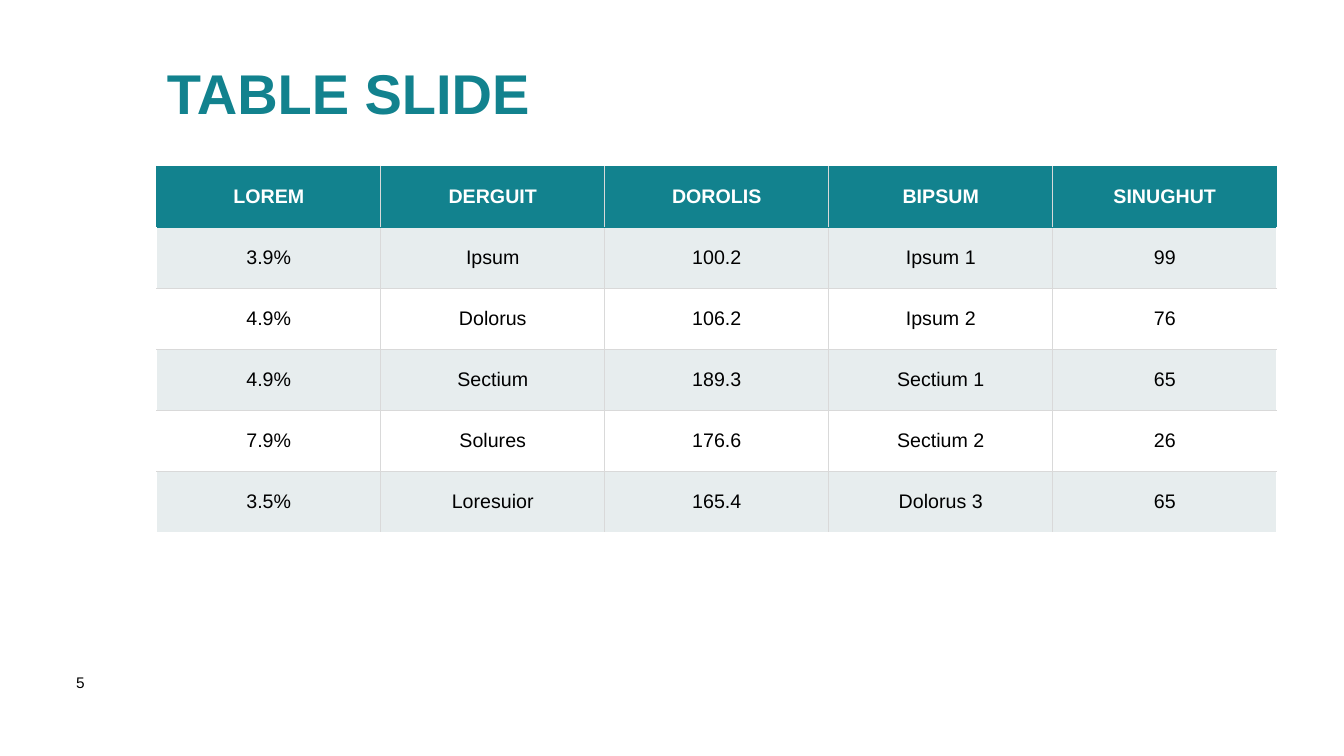
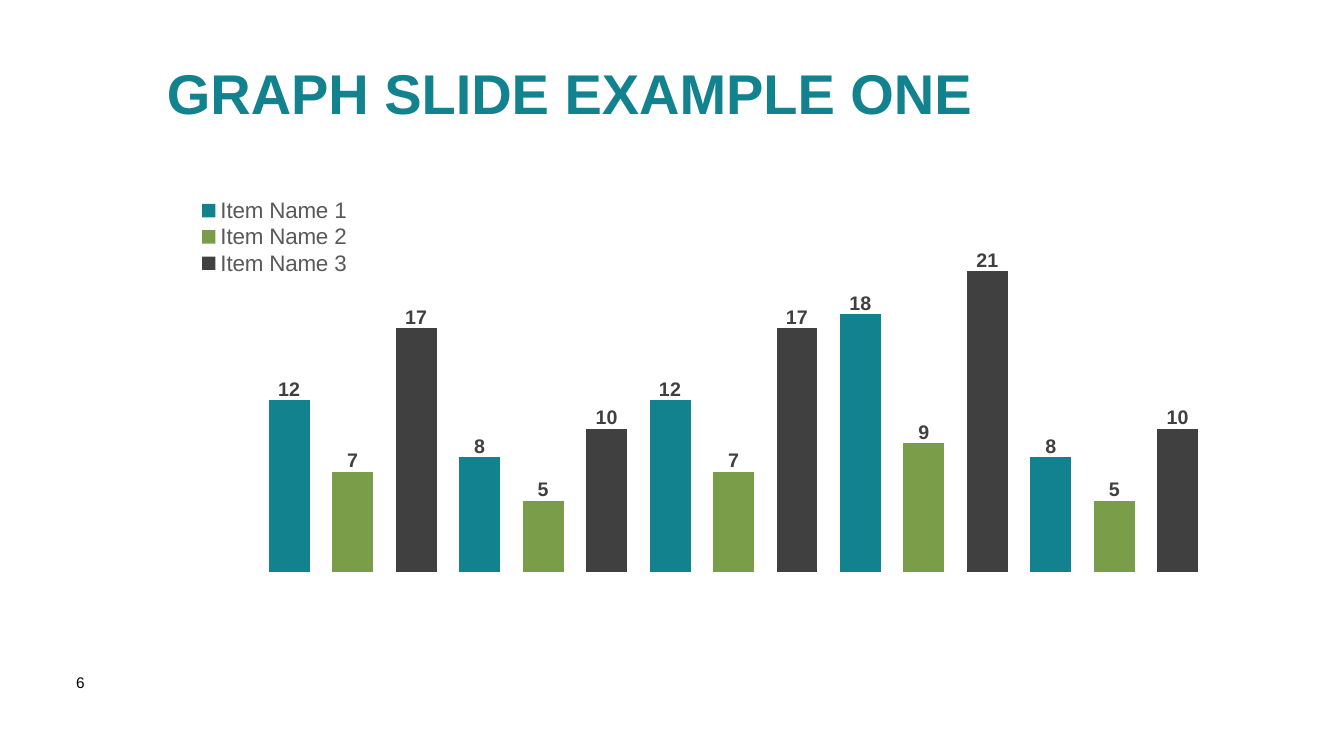
from lxml import etree
from pptx import Presentation
from pptx import util as u
from pptx.chart.data import CategoryChartData
from pptx.dml.color import RGBColor
from pptx.enum import chart as charts, text
from pptx.oxml import ns

# Colours
TEAL = RGBColor(0x12, 0x82, 0x8E)
GREEN = RGBColor(0x79, 0x9D, 0x49)
CHARCOAL = RGBColor(0x40, 0x40, 0x41)
LABEL_GREY = RGBColor(0x40, 0x40, 0x40)
LEGEND_GREY = RGBColor(0x59, 0x59, 0x59)
LINE_GREY = RGBColor(0xD9, 0xD9, 0xD9)
BAND = RGBColor(0xE7, 0xED, 0xEE)
WHITE = RGBColor(0xFF, 0xFF, 0xFF)
BLACK = RGBColor(0x00, 0x00, 0x00)

# Text styles
TITLE = {"size": 40, "bold": True, "color": TEAL}
PAGE_NUMBER = {"size": 11, "color": BLACK}
TABLE_HEAD = {"size": 14, "bold": True, "color": WHITE}
TABLE_BODY = {"size": 14, "bold": False, "color": BLACK}
BAR_LABEL = {"size": 14, "bold": True, "color": LABEL_GREY}
LEGEND = {"size": 16, "color": LEGEND_GREY}

# Grid: 12 columns by 12.4 rows
WIDTH, HEIGHT = u.Inches(13.33), u.Inches(7.5)
COLUMN, ROW = WIDTH / 12, HEIGHT / 12.4
LEFT, TOP, SPAN = 1.4, 2.73, 10


def format_font(font, style):
    values = {"name": "Arial", **style}
    font.color.rgb = values.pop("color")
    values["size"] = u.Pt(values["size"])
    for name, value in values.items():
        setattr(font, name, value)


def set_layout(parent, index, **values):
    """Give a chart part a manual layout, as shares of the chart."""
    for old in parent.findall(ns.qn("c:layout")):
        parent.remove(old)
    layout = etree.Element(ns.qn("c:layout"))
    manual = etree.SubElement(layout, ns.qn("c:manualLayout"))
    for name, value in values.items():
        etree.SubElement(manual, ns.qn(f"c:{name}")).set("val", str(value))
    parent.insert(index, layout)


def set_borders(cell, edges):
    properties = cell._tc.get_or_add_tcPr()
    for side, color in edges.items():
        if color is None:
            continue
        line = etree.SubElement(properties, ns.qn(f"a:ln{side}"), w=str(u.Pt(1)))
        fill = etree.SubElement(line, ns.qn("a:solidFill"))
        etree.SubElement(fill, ns.qn("a:srgbClr"), val=str(color))


class Deck:
    def __init__(self):
        self.presentation = Presentation()
        self.presentation.slide_width = WIDTH
        self.presentation.slide_height = HEIGHT
        self.slide = None

    def box(self, left, top, width, height):
        return (u.Emu(round(left * COLUMN)), u.Emu(round(top * ROW)),
                u.Emu(round(width * COLUMN)), u.Emu(round(height * ROW)))

    def add_slide(self, title, number):
        layout = self.presentation.slide_layouts[5]
        self.slide = self.presentation.slides.add_slide(layout)
        self.add_title(title)
        self.add_page_number(number)

    def add_title(self, title):
        shape = self.slide.shapes.title
        shape.left, shape.top, shape.width, shape.height = self.box(
            LEFT, 0.8, 9.6, 1.55)
        frame = shape.text_frame
        frame.text = title
        frame.auto_size = text.MSO_AUTO_SIZE.NONE
        frame.vertical_anchor = text.MSO_ANCHOR.MIDDLE
        paragraph = frame.paragraphs[0]
        paragraph.alignment = text.PP_ALIGN.LEFT
        paragraph.line_spacing = 0.9
        format_font(paragraph.font, TITLE)

    def add_page_number(self, number):
        shape = self.slide.shapes.add_textbox(*self.box(0.59, 10.96, 0.52, 0.9))
        frame = shape.text_frame
        frame.word_wrap = True
        frame.text = str(number)
        format_font(frame.paragraphs[0].font, PAGE_NUMBER)

    def add_table(self, rows):
        last_row, last_column = len(rows) - 1, len(rows[0]) - 1
        table = self.slide.shapes.add_table(
            len(rows), len(rows[0]), *self.box(LEFT, TOP, SPAN, len(rows))).table
        for r, row in enumerate(rows):
            head = r == 0
            outer = TEAL if head else None
            for c, value in enumerate(row):
                cell = table.cell(r, c)
                set_borders(cell, {
                    "L": LINE_GREY if c > 0 else outer,
                    "R": LINE_GREY if c < last_column else outer,
                    "T": TEAL if r <= 1 else LINE_GREY,
                    "B": TEAL if head else LINE_GREY if r < last_row else None,
                })
                cell.fill.solid()
                cell.fill.fore_color.rgb = TEAL if head else BAND if r % 2 else WHITE
                cell.vertical_anchor = text.MSO_ANCHOR.MIDDLE
                cell.text = value
                paragraph = cell.text_frame.paragraphs[0]
                paragraph.alignment = text.PP_ALIGN.CENTER
                format_font(paragraph.font, TABLE_HEAD if head else TABLE_BODY)

    def add_bar_chart(self, categories, series_list):
        data = CategoryChartData()
        data.categories = categories
        for name, _, values in series_list:
            data.add_series(name, values)
        chart = self.slide.shapes.add_chart(
            charts.XL_CHART_TYPE.COLUMN_STACKED,
            *self.box(LEFT, TOP, SPAN, 7.01), data).chart
        format_font(chart.font, {"size": 10, "color": BLACK})
        chart.has_title = False

        # Axes are hidden; the scale stays fixed
        chart.category_axis.visible = False
        axis = chart.value_axis
        axis.visible = axis.has_major_gridlines = False
        axis.minimum_scale, axis.maximum_scale = 0, 25

        # Bars, with each value lifted above its bar
        plot = chart.plots[0]
        plot.gap_width, plot.overlap = 55, 100
        plot.vary_by_categories = False
        for series, (_, color, values) in zip(plot.series, series_list):
            series.format.fill.solid()
            series.format.fill.fore_color.rgb = color
            for index, value in enumerate(values):
                if value is None:
                    continue
                label = series.points[index].data_label
                format_font(label.font, BAR_LABEL)
                label.position = charts.XL_LABEL_POSITION.INSIDE_END
            for element in series._element.iter(ns.qn("c:dLbl")):
                set_layout(element, 1, x=0, y=-0.06)

        # Legend and plot area
        chart.has_legend = True
        legend = chart.legend
        legend.position = charts.XL_LEGEND_POSITION.RIGHT
        legend.include_in_layout = False
        format_font(legend.font, LEGEND)
        set_layout(legend._element, 1, xMode="edge", yMode="edge",
                   x=0.03, y=0.07, w=0.15, h=0.19)
        set_layout(chart._chartSpace.chart.plotArea, 0, layoutTarget="inner",
                   xMode="edge", yMode="edge", x=0.09, y=0.11, w=0.85, h=0.84)


def every_third(values, offset):
    """Spread values over the categories, one in each group of three."""
    return [values[i // 3] if i % 3 == offset else None
            for i in range(3 * len(values))]


def main():
    deck = Deck()

    # Table slide
    deck.add_slide("TABLE SLIDE", 5)
    deck.add_table([
        ("LOREM", "DERGUIT", "DOROLIS", "BIPSUM", "SINUGHUT"),
        ("3.9%", "Ipsum", "100.2", "Ipsum 1", "99"),
        ("4.9%", "Dolorus", "106.2", "Ipsum 2", "76"),
        ("4.9%", "Sectium", "189.3", "Sectium 1", "65"),
        ("7.9%", "Solures", "176.6", "Sectium 2", "26"),
        ("3.5%", "Loresuior", "165.4", "Dolorus 3", "65"),
    ])

    # Chart slide
    deck.add_slide("GRAPH SLIDE EXAMPLE ONE", 6)
    deck.add_bar_chart([str(i) for i in range(1, 16)], [
        ("Item Name 3", CHARCOAL, every_third([17, 10, 17, 21, 10], 2)),
        ("Item Name 2", GREEN, every_third([7, 5, 7, 9, 5], 1)),
        ("Item Name 1", TEAL, every_third([12, 8, 12, 18, 8], 0)),
    ])

    deck.presentation.save("out.pptx")


if __name__ == "__main__":
    main()
